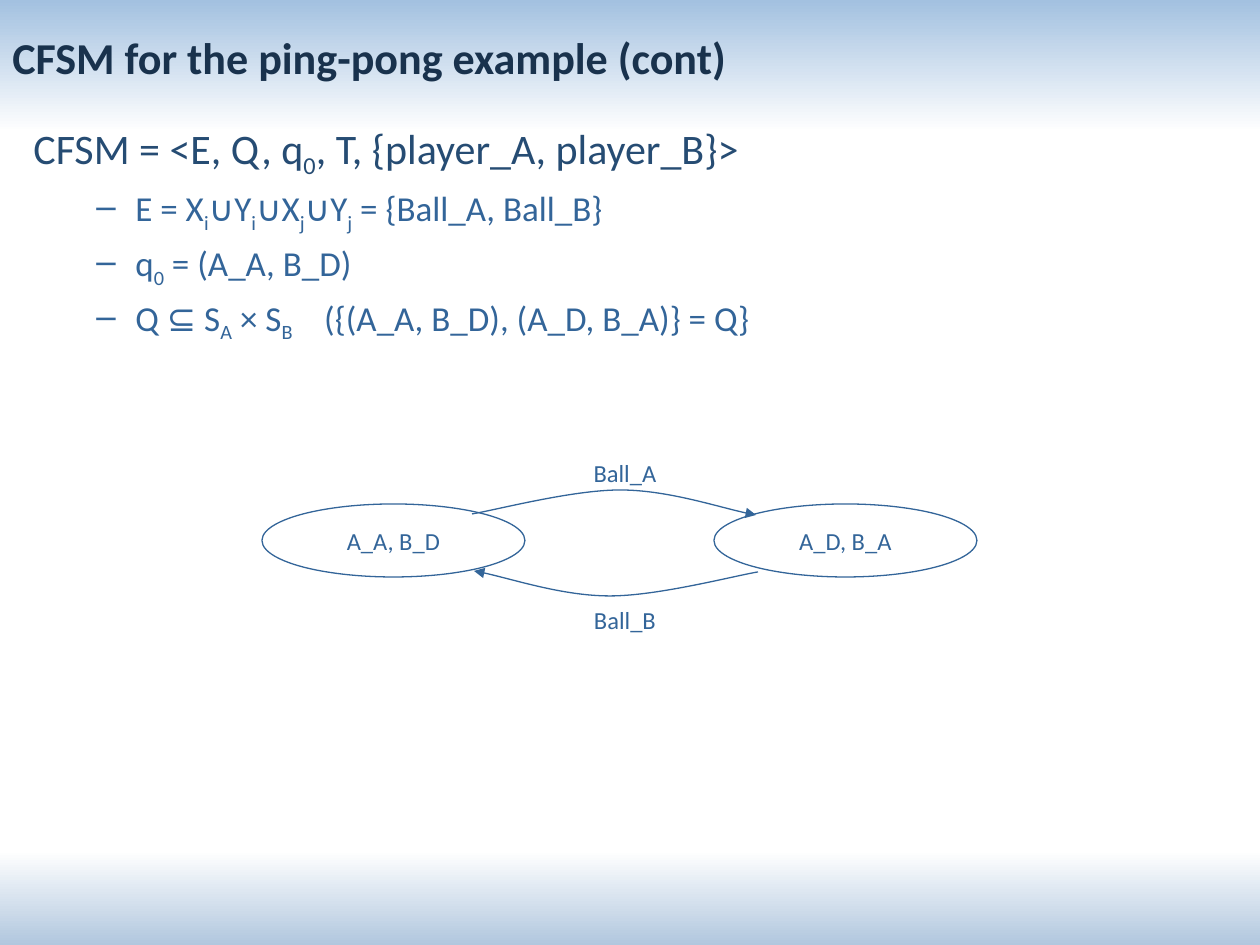
from lxml import etree
from pptx import Presentation, util as u
from pptx.dml.color import RGBColor
from pptx.enum import shapes, text
from pptx.oxml import parse_xml
from pptx.oxml.ns import nsdecls, qn

PX = 914400 // 126
FONT, BLUE = "Calibri", "336599"

# Content: ~x~ is a subscript, | is a wide gap
TITLE = "CFSM for the ping-pong example (cont)"
HEADING = "CFSM = <E, Q, q~0~, T, {player_A, player_B}>"
ITEMS = [
    "E = X~i~∪Y~i~∪X~j~∪Y~j~ = {Ball_A, Ball_B}",
    "q~0~ = (A_A, B_D)",
    "Q ⊆ S~A~ × S~B~|({(A_A, B_D), (A_D, B_A)} = Q}",
]
STATES = [("A_A, B_D", 262), ("A_D, B_A", 714)]
EVENTS = [("Ball_A", 451), ("Ball_B", 598)]
BACKGROUND = [(0, "A3C1E0"), (14, "FFFFFF"), (90, "FFFFFF"), (100, "B1C7DE")]

# Bezier points of the upper arrow; the lower one is turned half round
UPPER = [(472, 514), (496, 510), (572, 490), (620, 490),
         (667, 490), (727, 510), (756, 515)]
LOWER = [(1230 - x, 1086 - y) for x, y in UPPER]


def px(*lengths):
    return [length * PX for length in lengths]


def color(value):
    return RGBColor.from_string(value)


def set_font(paragraph, size, value, bold=False):
    font = paragraph.font
    font.name, font.size, font.bold = FONT, u.Pt(size), bold
    font.color.rgb = color(value)


def outline(shape):
    shape.shadow.inherit = False
    shape.fill.background()
    shape.line.color.rgb = color(BLUE)
    shape.line.width = u.Pt(0.75)


def add_label(shape, label):
    frame = shape.text_frame
    frame.word_wrap = False
    frame.vertical_anchor = text.MSO_ANCHOR.MIDDLE
    paragraph = frame.paragraphs[0]
    paragraph.text = label
    paragraph.alignment = text.PP_ALIGN.CENTER
    set_font(paragraph, 14, BLUE)


def add_runs(paragraph, line):
    for index, piece in enumerate(line.split("~")):
        for part in filter(None, piece.partition("|")):
            run = paragraph.add_run()
            run.text = part.replace("|", " ")
            properties = run.font._element
            if index % 2:
                properties.set("baseline", "-25000")
            if part == "|":
                properties.set("spc", "1350")


def add_curved_arrow(group, points):
    builder = group.shapes.build_freeform(*points[0], scale=PX)
    builder.add_line_segments(points[1:], close=False)
    shape = builder.convert_to_shape()
    outline(shape)
    # Turn each three line points into one cubic segment
    lines = list(shape._element.iter(qn("a:lnTo")))
    for start in range(0, len(lines), 3):
        curve = etree.Element(qn("a:cubicBezTo"))
        lines[start].addprevious(curve)
        for line in lines[start:start + 3]:
            curve.append(line[0])
            line.getparent().remove(line)
    border = shape._element.spPr.find(qn("a:ln"))
    etree.SubElement(border, qn("a:tailEnd"), type="triangle")


presentation = Presentation()
presentation.slide_width, presentation.slide_height = px(1260, 945)
slide = presentation.slides.add_slide(presentation.slide_layouts[6])

# Background gradient
slide.background.fill.solid()
solid = slide.element.find(".//" + qn("p:bgPr"))[0]
stops = "".join(f'<a:gs pos="{position * 1000}"><a:srgbClr val="{value}"/></a:gs>'
                for position, value in BACKGROUND)
solid.getparent().replace(solid, parse_xml(
    f'<a:gradFill {nsdecls("a")} rotWithShape="1"><a:gsLst>{stops}</a:gsLst>'
    '<a:lin ang="5400000" scaled="0"/></a:gradFill>'))

# State diagram
diagram = slide.shapes.add_group_shape()
for label, left in STATES:
    state = diagram.shapes.add_shape(shapes.MSO_SHAPE.OVAL, *px(left, 504, 263, 73))
    outline(state)
    add_label(state, label)
for points in (UPPER, LOWER):
    add_curved_arrow(diagram, points)
for label, top in EVENTS:
    add_label(diagram.shapes.add_textbox(*px(581, top, 88, 43)), label)

# Definition list
frame = slide.shapes.add_textbox(*px(21, 116, 1218, 284)).text_frame
frame.word_wrap = True
for index, line in enumerate([HEADING, *ITEMS]):
    paragraph = frame.add_paragraph() if index else frame.paragraphs[0]
    margin, hanging = px(102, 39) if index else px(48, 48)
    properties = paragraph._p.get_or_add_pPr()
    properties.set("marL", str(margin))
    properties.set("indent", str(-hanging))
    if index:
        paragraph.level = 1
        paragraph.space_before = u.Pt(4)
        etree.SubElement(properties, qn("a:buChar"), char="–")
    add_runs(paragraph, line)
    set_font(paragraph, *((20, BLUE) if index else (24, "264C73")))

# Title
frame = slide.shapes.add_textbox(*px(0, 0, 798, 94)).text_frame
frame.word_wrap = True
frame.vertical_anchor = text.MSO_ANCHOR.MIDDLE
frame.margin_top = u.Inches(0.2)
frame.paragraphs[0].text = TITLE
set_font(frame.paragraphs[0], 25.2, "19324D", bold=True)

presentation.save("out.pptx")
